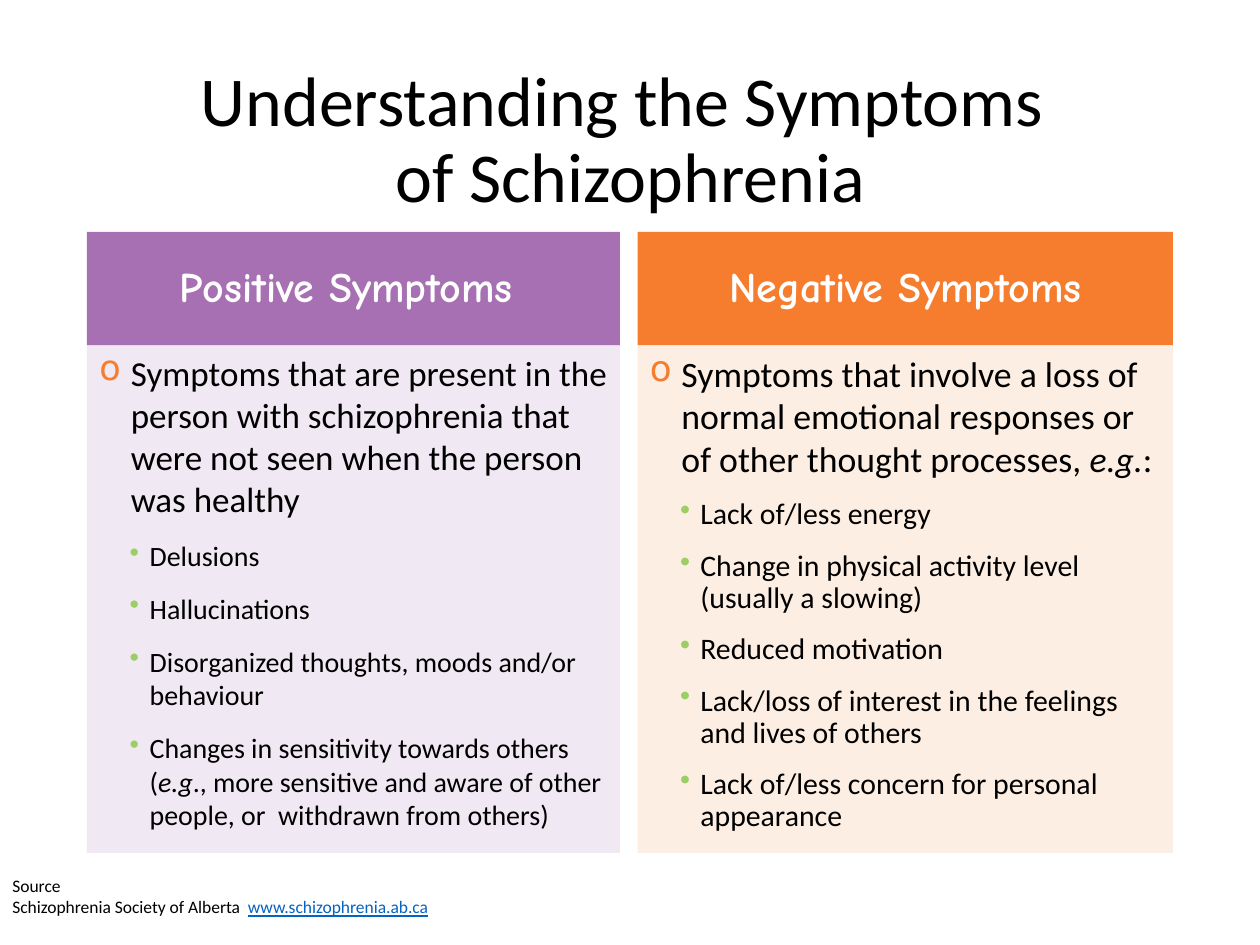
from dataclasses import dataclass

from lxml.etree import SubElement as Sub
from pptx import Presentation
from pptx.dml.color import RGBColor as Rgb
from pptx.enum.shapes import MSO_SHAPE as Shape
from pptx.enum.text import MSO_ANCHOR as Anchor, PP_ALIGN as Align
from pptx.oxml.ns import qn
from pptx.util import Inches, Pt


@dataclass(frozen=True)
class Theme:
    """Colours, fonts and type sizes of the slide."""
    ink: str = "000000"
    white: str = "FFFFFF"
    purple: str = "A770B2"
    orange: str = "F67C2E"
    green: str = "9BCE65"
    link: str = "0563C1"
    body: str = "Calibri"
    hand: str = "Comic Neue"
    title: float = 40
    head: float = 24
    note: float = 10


T = Theme()
TOP, HEAD, BODY = 1.84, 0.9, 4.03

COLUMNS = [
    dict(left=0.69, width=4.23, color=T.purple, alpha=16, title="Positive Symptoms ",
         lead="Symptoms that are present in the person with schizophrenia that "
              "were not seen when the person was healthy",
         items=["Delusions", "Hallucinations",
                "Disorganized thoughts, moods and/or behaviour",
                "Changes in sensitivity towards others (*e.g*., more sensitive and "
                "aware of other people, or  withdrawn from others)"],
         sizes=(20, 16), lines=1.0),
    dict(left=5.06, width=4.25, color=T.orange, alpha=13, title="Negative Symptoms",
         lead="Symptoms that involve a loss of normal emotional responses or "
              "of other thought processes, *e.g.*:",
         items=["Lack of/less energy",
                "Change in physical activity level (usually a slowing)",
                "Reduced motivation",
                "Lack/loss of interest in the feelings and lives of others",
                "Lack of/less concern for personal appearance"],
         sizes=(20.4, 17), lines=0.9),
]


def mark(para, char, color, left, hang):
    """Give a paragraph a coloured bullet and a hanging indent."""
    props = para._p.get_or_add_pPr()
    props.set("marL", str(Inches(left)))
    props.set("indent", str(-Inches(hang)))
    Sub(Sub(props, qn("a:buClr")), qn("a:srgbClr"), val=color)
    Sub(props, qn("a:buChar"), char=char)


def write(frame, text, size, color=T.ink, font=T.body, bold=False, align=Align.LEFT,
          lines=1.0, before=0, after=0, level=0, bullet=None, link=False):
    """Add a paragraph; parts between asterisks are italic, or links."""
    first = frame.paragraphs[0]
    para = frame.add_paragraph() if first.runs else first
    if bullet:
        mark(para, *bullet)
    para.level, para.alignment, para.line_spacing = level, align, lines
    para.space_before, para.space_after = Pt(before), Pt(after)
    for i, part in enumerate(text.split("*")):
        for j, line in enumerate(part.split("\n")):
            if j:
                para.add_line_break()
            if not line:
                continue
            run = para.add_run()
            run.text = line
            face, odd = run.font, i % 2 == 1
            face.name, face.size, face.bold = font, Pt(size), bold
            face.italic, face.underline = odd and not link, odd and link
            face.color.rgb = Rgb.from_string(T.link if odd and link else color)


def label(slide, left, top, width, height, anchor, wrap=True):
    """Add a text box and return its frame."""
    box = slide.shapes.add_textbox(*map(Inches, (left, top, width, height)))
    frame = box.text_frame
    frame.word_wrap, frame.vertical_anchor = wrap, anchor
    return frame


def panel(slide, left, top, width, height, color, anchor, alpha=None):
    """Add a filled rectangle and return its text frame."""
    box = slide.shapes.add_shape(Shape.RECTANGLE, *map(Inches, (left, top, width, height)))
    box.shadow.inherit = False
    box.line.fill.background()
    box.fill.solid()
    box.fill.fore_color.rgb = Rgb.from_string(color)
    if alpha:
        tint = box._element.spPr.find(qn("a:solidFill"))[0]
        Sub(tint, qn("a:alpha"), val=str(alpha * 1000))
    frame = box.text_frame
    frame.word_wrap, frame.vertical_anchor = True, anchor
    return frame


def column(slide, left, width, color, alpha, title, lead, items, sizes, lines):
    """Add a heading panel and the list panel below it."""
    head = panel(slide, left, TOP, width, HEAD, color, Anchor.MIDDLE)
    write(head, title, T.head, color=T.white, font=T.hand, bold=True,
          align=Align.CENTER, lines=0.9)
    body = panel(slide, left, TOP + HEAD, width, BODY, color, Anchor.TOP, alpha)
    big, small = sizes
    write(body, lead, big, after=6, bullet=("o", T.orange, 0.25, 0.25))
    for item in items:
        write(body, item, small, lines=lines, before=5, after=6, level=1,
              bullet=("•", T.green, 0.4, 0.16))


def main():
    """Build and save the slide."""
    deck = Presentation()
    deck.slide_width, deck.slide_height = Inches(10), Inches(7.5)
    slide = deck.slides.add_slide(deck.slide_layouts[6])
    title = label(slide, 0.69, 0.4, 8.62, 1.45, Anchor.MIDDLE)
    write(title, "Understanding the Symptoms \nof Schizophrenia", T.title,
          align=Align.CENTER, lines=0.9)
    for col in COLUMNS:
        column(slide, **col)
    note = label(slide, 0, 6.89, 3.56, 0.44, Anchor.BOTTOM, wrap=False)
    write(note, "Source", T.note)
    write(note, "Schizophrenia Society of Alberta  *www.schizophrenia.ab.ca*",
          T.note, link=True)
    deck.save("out.pptx")


if __name__ == "__main__":
    main()
